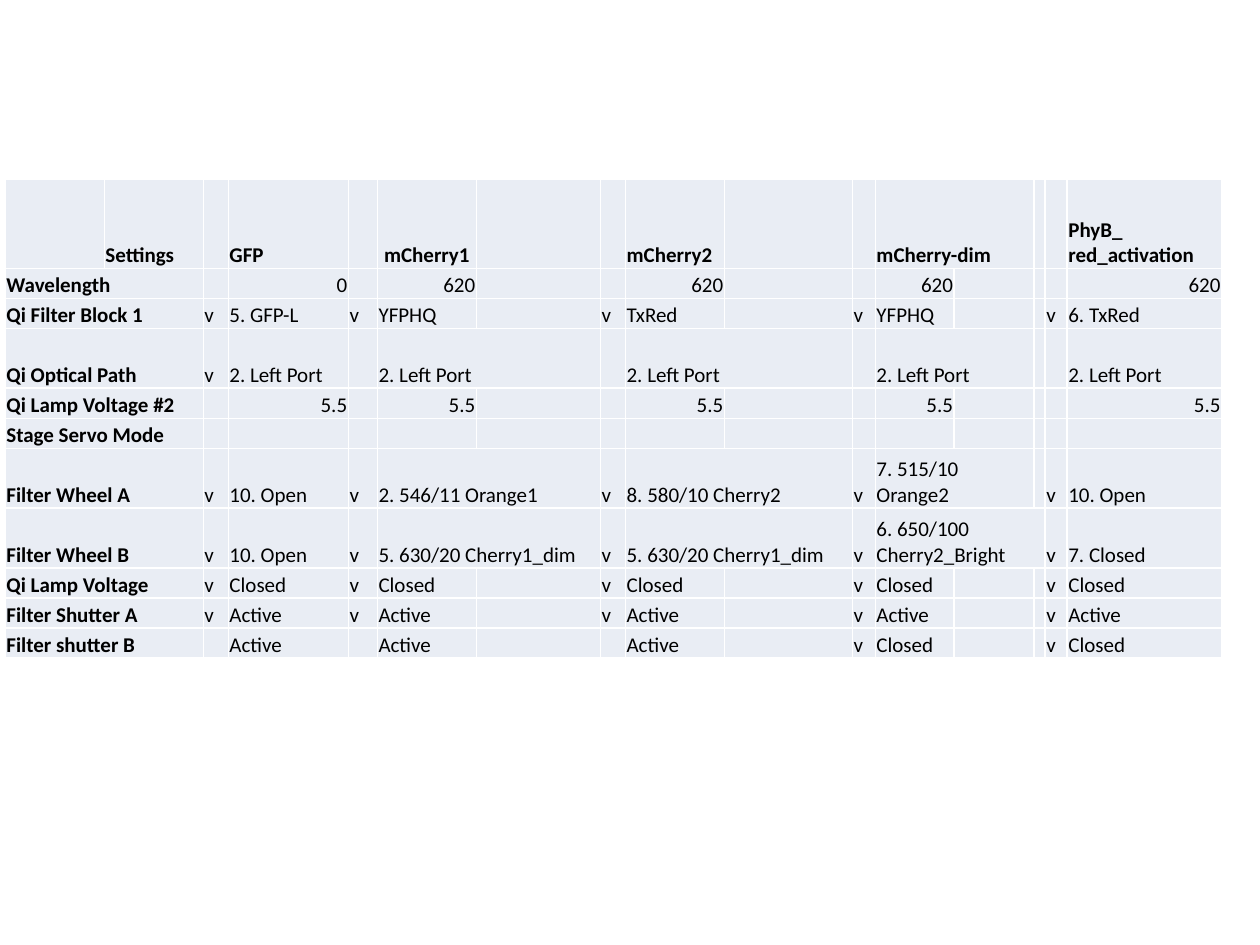
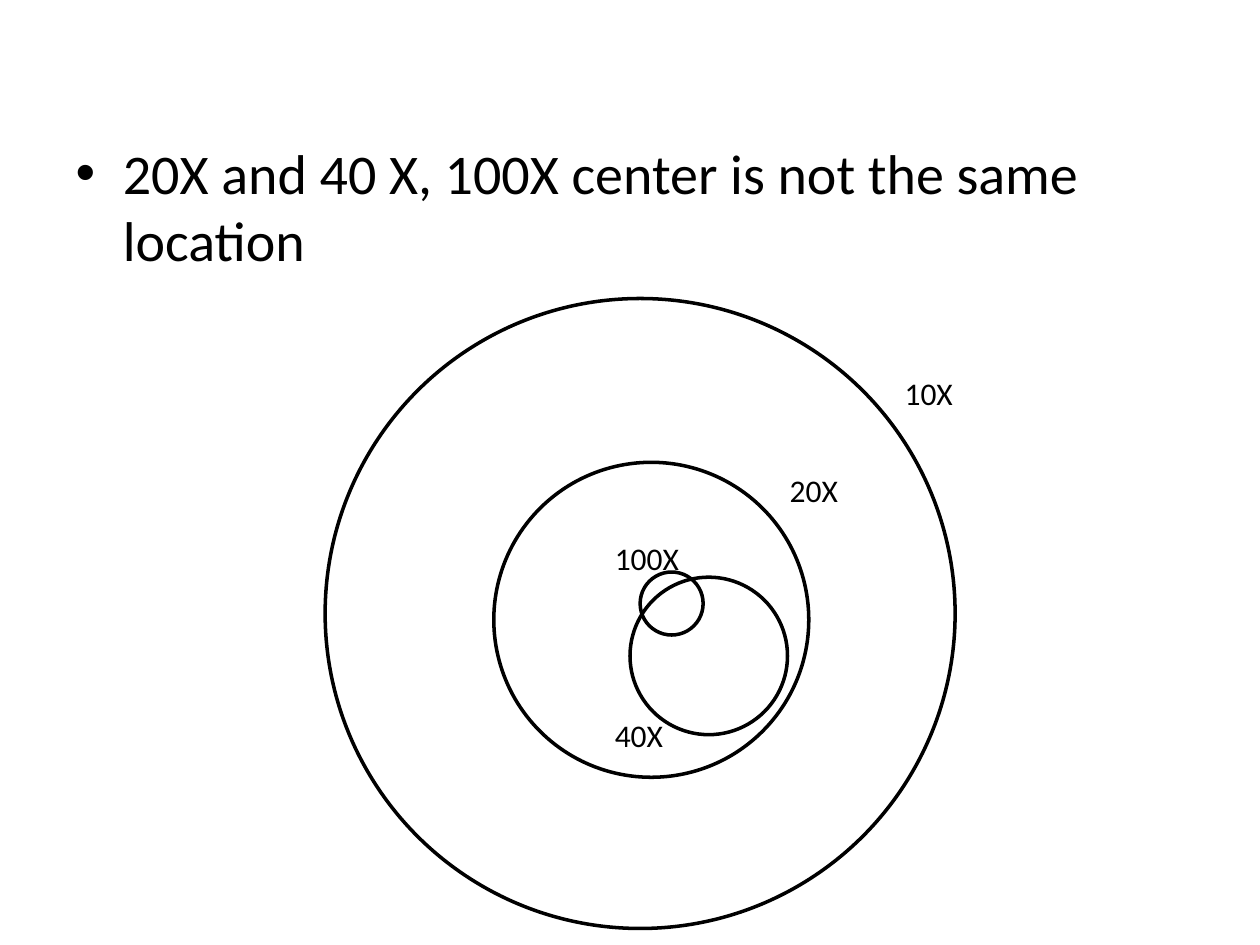
"""Build two slides: a table of microscope settings and a map of objective fields."""
from lxml.etree import SubElement
from pptx import Presentation
from pptx.dml.color import RGBColor
from pptx.enum.shapes import MSO_SHAPE as Shape
from pptx.enum.text import MSO_ANCHOR as Anchor, MSO_AUTO_SIZE as Fit, PP_ALIGN as Align
from pptx.oxml.ns import qn
from pptx.util import Pt

FONT = "Calibri"
BLACK = "000000"
PALE = "E9EDF4"


def paint(color, code):
    color.rgb = RGBColor.from_string(code)


def style(frame, size, bold=False):
    for para in frame.paragraphs:
        para.font.name = FONT
        para.font.size = Pt(size)
        para.font.bold = bold
        paint(para.font.color, BLACK)


deck = Presentation()
deck.slide_width, deck.slide_height = Pt(720), Pt(540)

slide = deck.slides.add_slide(deck.slide_layouts[6])
widths = [56.6, 56.6, 14.3, 68.6, 16.6, 56.6, 70.9, 14.3,
          56.6, 73.1, 13.1, 45.1, 45.7, 6.3, 12.6, 88.3]
heights = [51, 17.2, 17.2, 34.2, 17.2, 17.2, 34.2, 34.2, 17.2, 17.2, 17.2]
flag_cols = [2, 4, 7, 10, 14]
value_cols = [3, 5, 8, 11, 15]
heads = ["GFP", "mCherry1", "mCherry2", "mCherry-dim", "PhyB_\nred_activation"]
rows = [
    ("Wavelength", "-----", ["0"] + ["620"] * 4),
    ("Qi Filter Block 1", "vvvvv", ["5. GFP-L", "YFPHQ", "TxRed", "YFPHQ", "6. TxRed"]),
    ("Qi Optical Path", "v----", ["2. Left Port"] * 5),
    ("Qi Lamp Voltage #2", "-----", ["5.5"] * 5),
    ("Stage Servo Mode", "-----", [""] * 5),
    ("Filter Wheel A", "vvvvv", ["10. Open", "2. 546/11 Orange1", "8. 580/10 Cherry2",
                                 "7. 515/10 Orange2", "10. Open"]),
    ("Filter Wheel B", "vvvvv", ["10. Open", "5. 630/20 Cherry1_dim", "5. 630/20 Cherry1_dim",
                                 "6. 650/100 Cherry2_Bright", "7. Closed"]),
    ("Qi Lamp Voltage", "vvvvv", ["Closed"] * 5),
    ("Filter Shutter A", "vvvvv", ["Active"] * 5),
    ("Filter shutter B", "---vv", ["Active"] * 3 + ["Closed"] * 2),
]

table = slide.shapes.add_table(len(heights), len(widths), Pt(3), Pt(102.3),
                               Pt(sum(widths)), Pt(sum(heights))).table
table.first_row = table.horz_banding = False
for col, width in zip(table.columns, widths):
    col.width = Pt(width)
for row, height in zip(table.rows, heights):
    row.height = Pt(height)

texts = {(0, 1): "Settings"}
texts.update({(0, col): head for col, head in zip(value_cols, heads)})
for r, (label, flags, values) in enumerate(rows, 1):
    texts[r, 0] = label
    texts.update({(r, col): flag for col, flag in zip(flag_cols, flags) if flag == "v"})
    texts.update({(r, col): value for col, value in zip(value_cols, values)})

for r in range(len(heights)):
    for c in range(len(widths)):
        cell = table.cell(r, c)
        text = texts.get((r, c), "")
        cell.text = text
        cell.fill.solid()
        paint(cell.fill.fore_color, PALE)
        cell.vertical_anchor = Anchor.BOTTOM
        cell.margin_left = cell.margin_right = cell.margin_top = Pt(0.7)
        cell.margin_bottom = 0
        style(cell.text_frame, 12, r == 0 or c == 0)
        para = cell.text_frame.paragraphs[0]
        if text.replace(".", "").isdigit():
            para.alignment = Align.RIGHT
        elif text == "mCherry1":
            para.alignment = Align.CENTER
        elif not text:
            SubElement(para._p, qn("a:endParaRPr"), sz="1200")

spans = [(r, 0, 1) for r in range(1, len(heights))]
spans += [(r, c, c + 1) for r in (3, 6) for c in (5, 8, 11)]
spans += [(0, 11, 12), (7, 5, 6), (7, 8, 9), (7, 11, 13)]
for r, start, end in spans:
    table.cell(r, start).merge(table.cell(r, end))

slide = deck.slides.add_slide(deck.slide_layouts[1])
title, body = slide.placeholders
title.element.getparent().remove(title.element)
body.left, body.top, body.width, body.height = Pt(36), Pt(75.6), Pt(648), Pt(356.4)
body.text_frame.text = "20X and 40 X, 100X center is not the same location"
style(body.text_frame, 32)

fields = [("40X", 360, 329.8, 90, 344.2, 405.4), ("100X", 365.8, 326.9, 36, 344.2, 304.6),
          ("20X", 282.2, 264.2, 180, 444.2, 265.7), ("10X", 185.8, 170.6, 360, 509.8, 210.2)]
for name, left, top, size, x, y in fields:
    ring = slide.shapes.add_shape(Shape.OVAL, Pt(left), Pt(top), Pt(size), Pt(size))
    ring.shadow.inherit = False
    ring.fill.background()
    ring.line.width = Pt(2)
    paint(ring.line.color, BLACK)
for name, left, top, size, x, y in reversed(fields):
    frame = slide.shapes.add_textbox(Pt(x), Pt(y), Pt(54), Pt(29)).text_frame
    frame.word_wrap = True
    frame.auto_size = Fit.SHAPE_TO_FIT_TEXT
    frame.text = name
    style(frame, 18)

deck.save("out.pptx")
